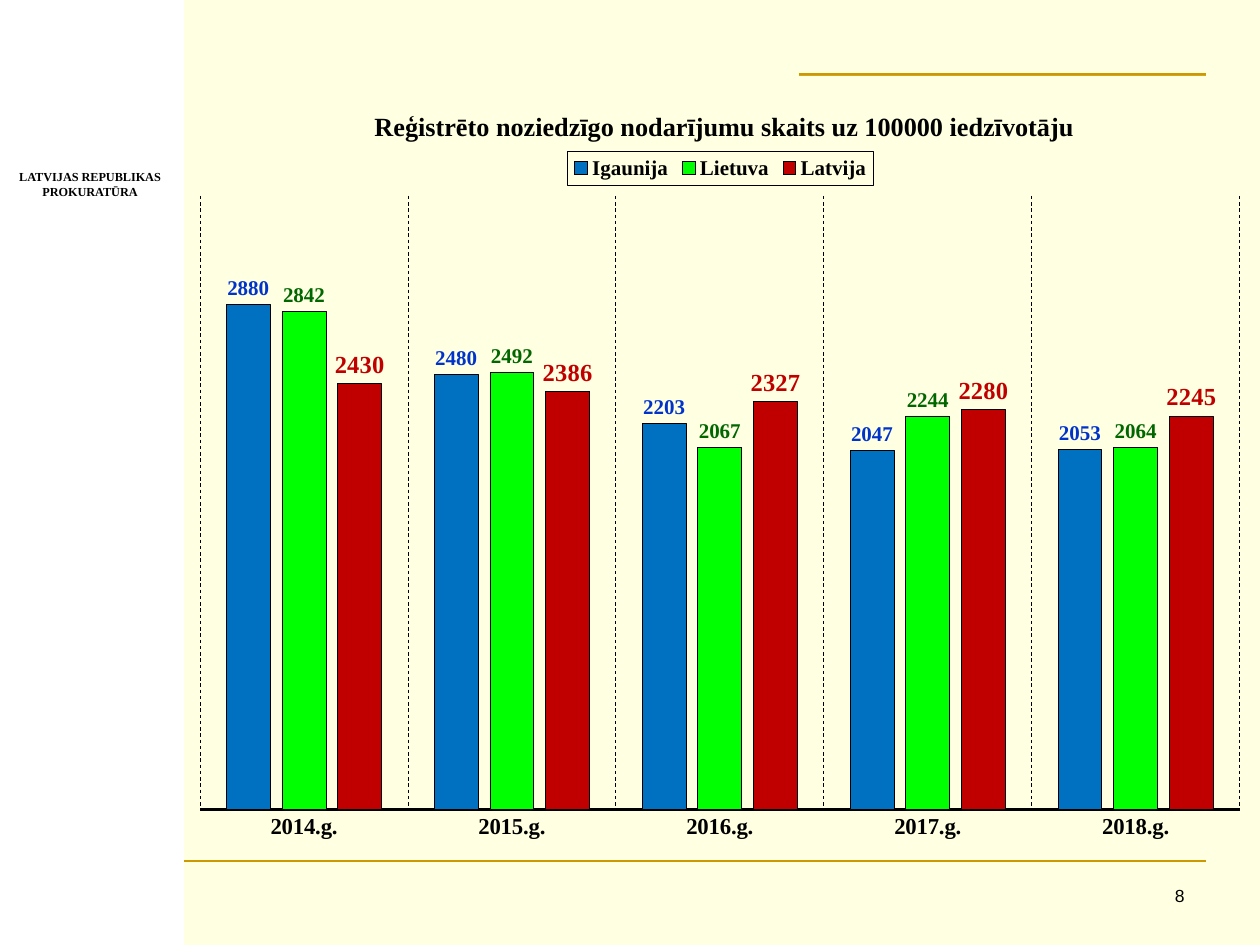
from lxml import etree
from pptx import Presentation
from pptx.chart.data import CategoryChartData
from pptx.dml.color import RGBColor
from pptx.enum.chart import XL_CHART_TYPE, XL_LABEL_POSITION, XL_LEGEND_POSITION, XL_TICK_MARK
from pptx.enum.dml import MSO_LINE
from pptx.enum.shapes import MSO_CONNECTOR, MSO_SHAPE
from pptx.enum.text import PP_ALIGN
from pptx.oxml import parse_xml
from pptx.oxml.ns import nsdecls, qn
from pptx.util import Pt

PX = 7257.14  # EMU in one px, 126 px to the inch
SERIF = "Times New Roman"
COLORS = {
    "background": "FFFFE1", "sidebar": "FFFFFF", "rule": "CC9900", "text": "000000",
    "estonia": "0070C0", "lithuania": "00FF00", "latvia": "C00000",
    "estonia_label": "0033CC", "lithuania_label": "006600", "latvia_label": "C00000",
}
YEARS = ["2014.g.", "2015.g.", "2016.g.", "2017.g.", "2018.g."]
# name, values, colour key, label size
COUNTRIES = [
    ("Igaunija", [2880, 2480, 2203, 2047, 2053], "estonia", 12),
    ("Lietuva", [2842, 2492, 2067, 2244, 2064], "lithuania", 12),
    ("Latvija", [2430, 2386, 2327, 2280, 2245], "latvia", 14),
]
CHART_BOX = (184, 76, 1074, 784)


def style_font(font, size, color="text", name=SERIF, bold=True):
    font.size, font.name, font.bold = Pt(size), name, bold
    font.color.rgb = RGBColor.from_string(COLORS[color])


def place_chart_part(part, index, left, top, width=None, height=None, inner=False):
    """Give a chart part a manual layout, from a box in slide px."""
    for old in part.findall(qn("c:layout")):
        part.remove(old)
    layout = parse_xml(f"<c:layout {nsdecls('c')}><c:manualLayout/></c:layout>")
    manual = layout[0]
    chart_left, chart_top, chart_width, chart_height = CHART_BOX
    settings = [("layoutTarget", "inner")] if inner else []
    settings += [("xMode", "edge"), ("yMode", "edge"),
                 ("x", round((left - chart_left) / chart_width, 3)),
                 ("y", round((top - chart_top) / chart_height, 3))]
    if width:
        settings += [("w", round(width / chart_width, 3)), ("h", round(height / chart_height, 3))]
    for tag, value in settings:
        etree.SubElement(manual, qn(f"c:{tag}")).set("val", str(value))
    part.insert(index, layout)


presentation = Presentation()
presentation.slide_width, presentation.slide_height = int(1260 * PX), int(945 * PX)
slide = presentation.slides.add_slide(presentation.slide_layouts[6])
slide.background.fill.solid()
slide.background.fill.fore_color.rgb = RGBColor.from_string(COLORS["background"])

# Sidebar and rules
sidebar = slide.shapes.add_shape(MSO_SHAPE.RECTANGLE, 0, 0, int(184 * PX), int(945 * PX))
sidebar.shadow.inherit = False
sidebar.fill.solid()
sidebar.fill.fore_color.rgb = RGBColor.from_string(COLORS["sidebar"])
sidebar.line.fill.background()

for left, y in [(184, 860), (799, 75)]:
    rule = slide.shapes.add_connector(
        MSO_CONNECTOR.STRAIGHT, *(int(n * PX) for n in (left, y, 1206, y)))
    rule.line.color.rgb = RGBColor.from_string(COLORS["rule"])
    rule.line.width = Pt(2.25)
    etree.SubElement(rule._element.spPr, qn("a:effectLst"))

# Office name and page number
for text, box, align, size, font_name, bold, wrap in [
    ("LATVIJAS REPUBLIKAS\nPROKURATŪRA", (6, 163, 168, 42), PP_ALIGN.CENTER, 7, SERIF, True, False),
    ("8", (935, 879, 262, 44), PP_ALIGN.RIGHT, 10, "Arial", False, True),
]:
    text_frame = slide.shapes.add_textbox(*(int(n * PX) for n in box)).text_frame
    text_frame.word_wrap = wrap
    text_frame.text = text
    for paragraph in text_frame.paragraphs:
        paragraph.alignment = align
        style_font(paragraph.runs[0].font, size, name=font_name, bold=bold)

# Chart
chart_data = CategoryChartData()
chart_data.categories = YEARS
for name, values, _, _ in COUNTRIES:
    chart_data.add_series(name, values)
chart = slide.shapes.add_chart(
    XL_CHART_TYPE.COLUMN_CLUSTERED, *(int(n * PX) for n in CHART_BOX), chart_data).chart
style_font(chart.font, 10, bold=False)
chart_space = chart._chartSpace
chart_space.find(qn("c:chart")).addnext(parse_xml(
    f"<c:spPr {nsdecls('c', 'a')}><a:solidFill><a:srgbClr val=\"{COLORS['background']}\"/>"
    "</a:solidFill><a:ln><a:noFill/></a:ln></c:spPr>"))

chart.has_title = True
title_frame = chart.chart_title.text_frame
title_frame.text = "Reģistrēto noziedzīgo nodarījumu skaits uz 100000 iedzīvotāju"
style_font(title_frame.paragraphs[0].runs[0].font, 15)
chart.chart_title.include_in_layout = False

chart.has_legend = True
chart.legend.position = XL_LEGEND_POSITION.TOP
chart.legend.include_in_layout = False
style_font(chart.legend.font, 12)
chart_space.find(".//" + qn("c:legend")).find(qn("c:overlay")).addnext(parse_xml(
    f"<c:spPr {nsdecls('c', 'a')}><a:ln w=\"6350\"><a:solidFill>"
    f"<a:srgbClr val=\"{COLORS['text']}\"/></a:solidFill></a:ln></c:spPr>"))

place_chart_part(chart_space.find(".//" + qn("c:title")), 1, 370, 105)
place_chart_part(chart_space.find(".//" + qn("c:legend")), 1, 567, 151, 306, 34)
place_chart_part(chart_space.find(".//" + qn("c:plotArea")), 0, 200, 196, 1040, 614, inner=True)

value_axis = chart.value_axis
value_axis.minimum_scale, value_axis.maximum_scale = 0, 3500
value_axis.has_major_gridlines = False
value_axis.visible = False

category_axis = chart.category_axis
category_axis.major_tick_mark = XL_TICK_MARK.NONE
style_font(category_axis.tick_labels.font, 13)
category_axis.format.line.color.rgb = RGBColor.from_string(COLORS["text"])
category_axis.format.line.width = Pt(1.5)
category_axis.has_major_gridlines = True
grid_line = category_axis.major_gridlines.format.line
grid_line.color.rgb = RGBColor.from_string(COLORS["text"])
grid_line.width = Pt(0.5)
grid_line.dash_style = MSO_LINE.DASH

plot = chart.plots[0]
plot.gap_width, plot.overlap = 120, -27
plot.vary_by_categories = False
for series, (_, _, color, label_size) in zip(plot.series, COUNTRIES):
    series.format.fill.solid()
    series.format.fill.fore_color.rgb = RGBColor.from_string(COLORS[color])
    series.format.line.color.rgb = RGBColor.from_string(COLORS["text"])
    series.format.line.width = Pt(0.5)
    labels = series.data_labels
    labels.show_value = True
    labels.position = XL_LABEL_POSITION.OUTSIDE_END
    style_font(labels.font, label_size, f"{color}_label")

presentation.save("out.pptx")
